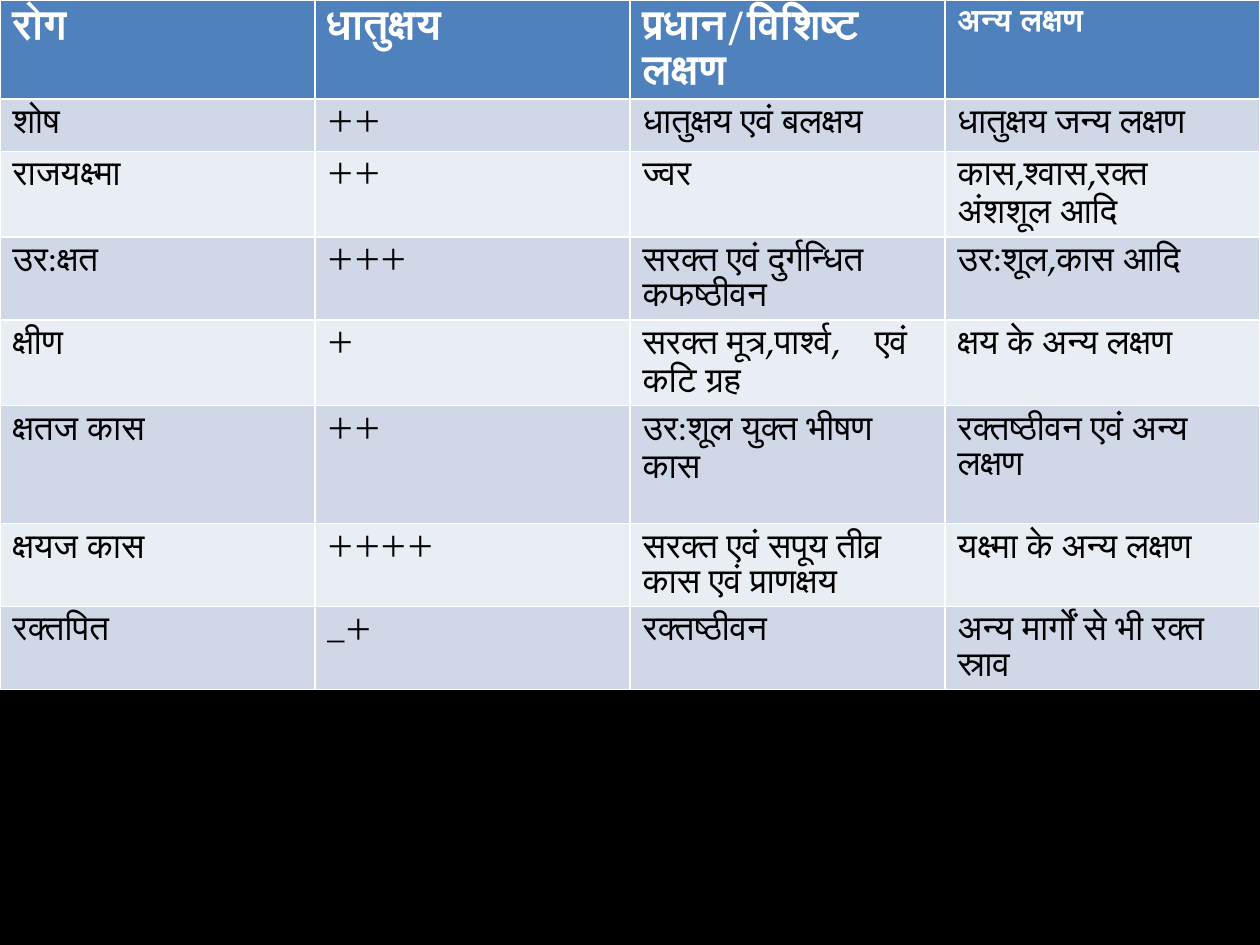
import pptx
import pptx.dml.color
import pptx.oxml
import pptx.oxml.ns
import pptx.util
from pptx.util import Cm

FONT = "TeX Gyre Pagella"
BLACK = pptx.dml.color.RGBColor(0x00, 0x00, 0x00)
WHITE = pptx.dml.color.RGBColor(0xFF, 0xFF, 0xFF)
HEADER_BLUE = pptx.dml.color.RGBColor(0x4F, 0x81, 0xBD)
BAND_FILLS = (
    pptx.dml.color.RGBColor(0xD0, 0xD8, 0xE8),
    pptx.dml.color.RGBColor(0xE9, 0xED, 0xF4),
)

SLIDE_WIDTH = Cm(25.4)
SLIDE_HEIGHT = Cm(19.05)
TAB_POSITION = Cm(4.68)
HEADER_HEIGHT = Cm(1.98)

HEADINGS = (("रोग", 24), ("धातुक्षय", 24), ("प्रधान/विशिष्ट लक्षण", 24), ("अन्य लक्षण", 18))
DISEASES = (
    (Cm(1.05), ("शोष", "++", "धातुक्षय एवं बलक्षय", "धातुक्षय जन्य लक्षण")),
    (Cm(1.73), ("राजयक्ष्मा", "++", "ज्वर", "कास,श्वास,रक्त\nअंशशूल आदि")),
    (Cm(1.67), ("उर:क्षत", "+++", "सरक्त एवं दुर्गन्धित कफष्ठीवन", "उर:शूल,कास आदि")),
    (Cm(1.71), ("क्षीण", "+", "सरक्त मूत्र,पार्श्व,\tएवं कटि ग्रह", "क्षय के अन्य लक्षण")),
    (Cm(2.38), ("क्षतज कास", "++", "उर:शूल युक्त भीषण कास", "रक्तष्ठीवन एवं अन्य लक्षण")),
    (Cm(1.67), ("क्षयज कास", "++++", "सरक्त एवं सपूय तीव्र कास एवं प्राणक्षय", "यक्ष्मा के अन्य लक्षण")),
    (Cm(1.67), ("रक्तपित", "_+", "रक्तष्ठीवन", "अन्य मार्गों से भी रक्त स्राव")),
)


def add_tab_stop(paragraph, position):
    """Give the paragraph one left tab stop."""
    properties = paragraph._p.get_or_add_pPr()
    namespace = pptx.oxml.ns.nsdecls("a")
    properties.insert(0, pptx.oxml.parse_xml(
        f'<a:tabLst {namespace}><a:tab pos="{position}" algn="l"/></a:tabLst>'))


def fill_cell(cell, text, size, color, fill, bold=False):
    """Write the text of a cell and set its fill and font."""
    cell.fill.solid()
    cell.fill.fore_color.rgb = fill
    cell.text = text
    for paragraph in cell.text_frame.paragraphs:
        paragraph.font.name = FONT
        paragraph.font.size = pptx.util.Pt(size)
        paragraph.font.bold = bold
        paragraph.font.color.rgb = color
        if "\t" in text:
            add_tab_stop(paragraph, TAB_POSITION)


def add_disease_table(slide):
    """Add the table that compares the diseases and their signs."""
    height = HEADER_HEIGHT + sum(row_height for row_height, _ in DISEASES)
    table = slide.shapes.add_table(
        len(DISEASES) + 1, len(HEADINGS), Cm(0), Cm(0), SLIDE_WIDTH, height).table
    table.rows[0].height = HEADER_HEIGHT
    for column, (heading, size) in enumerate(HEADINGS):
        fill_cell(table.cell(0, column), heading, size, WHITE, HEADER_BLUE, bold=True)
    for row, (row_height, texts) in enumerate(DISEASES, start=1):
        table.rows[row].height = row_height
        fill = BAND_FILLS[(row - 1) % 2]
        for column, text in enumerate(texts):
            fill_cell(table.cell(row, column), text, 20, BLACK, fill)


def main():
    """Build the slide and save the presentation."""
    presentation = pptx.Presentation()
    presentation.slide_width = SLIDE_WIDTH
    presentation.slide_height = SLIDE_HEIGHT
    slide = presentation.slides.add_slide(presentation.slide_layouts[6])
    slide.background.fill.solid()
    slide.background.fill.fore_color.rgb = BLACK
    add_disease_table(slide)
    presentation.save("out.pptx")


if __name__ == "__main__":
    main()
